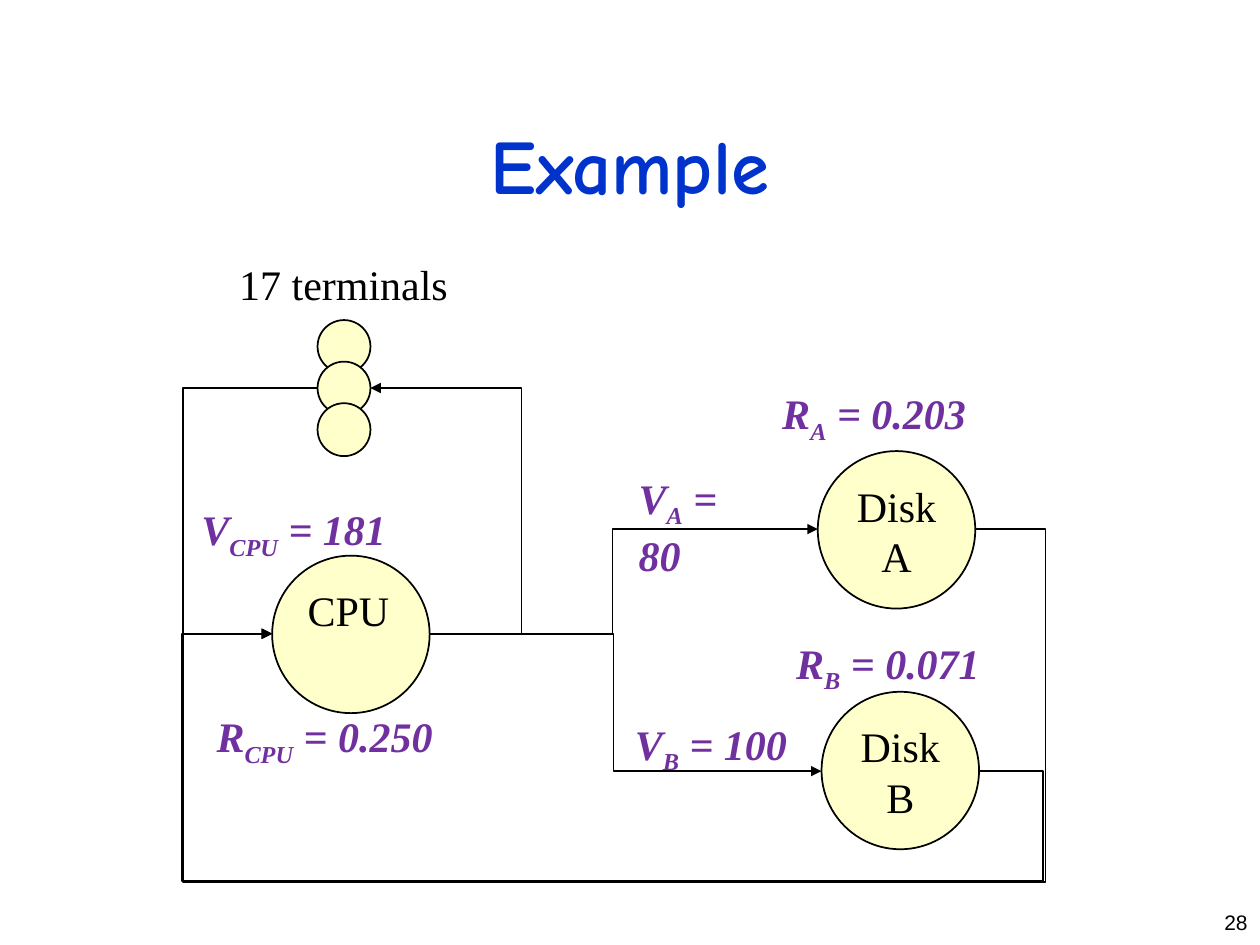
import pptx
import pptx.util
import pptx.dml.color
import pptx.enum.shapes
import pptx.enum.text
import pptx.oxml.ns
import pptx.oxml.xmlchemy

Inch = pptx.util.Inches
Align = pptx.enum.text.PP_ALIGN
Anchor = pptx.enum.text.MSO_ANCHOR

# Theme: colours and type
THEME = {
    "ink": "000000",
    "fill": "FFFFCC",
    "line": 1,
    "head": {"name": "Comic Neue", "size": 44, "color": "0033CC", "bold": True},
    "body": {"name": "Times New Roman", "size": 24, "color": "000000"},
    "math": {"name": "Times New Roman", "size": 24, "color": "7030A0",
             "bold": True, "italic": True},
    "page": {"name": "Arial", "size": 12, "color": "000000"},
}

# Content: circles as (text, left, top, align)
DISC = 1.25
NODES = [
    ("CPU", 2.16, 4.41, Align.LEFT),
    ("Disk A", 6.49, 3.58, Align.CENTER),
    ("Disk B", 6.52, 5.49, Align.CENTER),
]
DOT, DOT_X, DOT_Y, DOT_STEP, DOTS = 0.42, 2.52, 2.54, 0.33, 3

# Routes as (from, to, bends); bends run x or x, y, x
OUT, IN = (3.41, 5.03), (2.16, 5.03)
ROUTES = [
    (OUT, (6.49, 4.2), [4.86]),
    (OUT, (6.52, 6.12), [4.87]),
    (OUT, (2.94, 3.08), [4.14]),
    ((2.52, 3.08), IN, [1.45]),
    ((7.74, 4.2), IN, [8.3, 7, 1.45]),
    ((7.77, 6.12), IN, [8.28, 6.99, 1.45]),
]

# Labels as (letter, index, value, left, top, width, wrap)
LABELS = [
    ("R", "CPU", "0.250", 1.62, 5.59, 1.99, False),
    ("R", "A", "0.203", 6.11, 3.03, 1.69, False),
    ("R", "B", "0.071", 6.22, 5.01, 1.69, False),
    ("V", "A", "80", 4.97, 3.7, 1.23, True),
    ("V", "B", "100", 4.94, 5.65, 1.44, False),
    ("V", "CPU", "181", 1.5, 3.95, 1.74, False),
]


def tint(code):
    return pptx.dml.color.RGBColor.from_string(code)


def node(tag, **attrs):
    item = pptx.oxml.xmlchemy.OxmlElement(tag)
    for key, val in attrs.items():
        item.set(key, val)
    return item


def style(font, look):
    for key, val in look.items():
        if key == "color":
            font.color.rgb = tint(val)
        else:
            setattr(font, key, pptx.util.Pt(val) if key == "size" else val)


def write(frame, runs, look, align=Align.LEFT, **form):
    """Fill a frame with (text, is_sub) runs."""
    form = {"word_wrap": True, "vertical_anchor": Anchor.TOP, **form}
    for key, val in form.items():
        setattr(frame, key, val)
    para = frame.paragraphs[0]
    para.alignment = align
    for text, sub in runs:
        run = para.add_run()
        run.text = text
        style(run.font, THEME[look])
        if sub:
            run.font._element.set("baseline", "-25000")


def label(slide, box, runs, look, **form):
    shape = slide.shapes.add_textbox(*map(Inch, box))
    write(shape.text_frame, runs, look, **form)


def trim(line):
    line.color.rgb = tint(THEME["ink"])
    line.width = pptx.util.Pt(THEME["line"])


def disc(slide, left, top, size):
    kind = pptx.enum.shapes.MSO_SHAPE.OVAL
    shape = slide.shapes.add_shape(kind, *map(Inch, (left, top, size, size)))
    shape.shadow.inherit = False
    shape.fill.solid()
    shape.fill.fore_color.rgb = tint(THEME["fill"])
    trim(shape.line)
    return shape


def route(slide, start, end, bends):
    kind = pptx.enum.shapes.MSO_CONNECTOR.ELBOW
    wire = slide.shapes.add_connector(kind, *map(Inch, start + end))
    trim(wire.line)
    props = wire._element.spPr
    # Each bend is a share of the span along its own axis
    geom = props.find(pptx.oxml.ns.qn("a:prstGeom"))
    geom.set("prst", f"bentConnector{len(bends) + 2}")
    guides = geom.find(pptx.oxml.ns.qn("a:avLst"))
    for num, bend in enumerate(bends):
        axis = num % 2
        share = (bend - start[axis]) / (end[axis] - start[axis])
        guides.append(node("a:gd", name=f"adj{num + 1}",
                           fmla=f"val {round(share * 100000)}"))
    # Arrowhead, no shadow
    line = props.find(pptx.oxml.ns.qn("a:ln"))
    line.append(node("a:tailEnd", type="triangle"))
    props.append(node("a:effectLst"))


def main():
    deck = pptx.Presentation()
    deck.slide_width, deck.slide_height = Inch(10), Inch(7.5)
    slide = deck.slides.add_slide(deck.slide_layouts[6])

    # Title and page number
    label(slide, (0.75, 0.67, 8.5, 1.25), [("Example", False)], "head",
          align=Align.CENTER, vertical_anchor=Anchor.MIDDLE)
    label(slide, (9.25, 7.17, 0.75, 0.33), [("28", False)], "page",
          align=Align.RIGHT)

    # CPU and disks
    for text, left, top, align in NODES:
        shape = disc(slide, left, top, DISC)
        write(shape.text_frame, [(text, False)], "body", align)

    # Terminals
    for num in range(DOTS):
        disc(slide, DOT_X, DOT_Y + num * DOT_STEP, DOT)
    label(slide, (1.8, 2, 1.87, 0.5), [("17 terminals", False)], "body",
          word_wrap=False)

    # Flow lines
    for start, end, bends in ROUTES:
        route(slide, start, end, bends)

    # Visit counts and residence times
    for name, index, value, left, top, width, wrap in LABELS:
        runs = [(name, False), (index, True), (f" = {value}", False)]
        label(slide, (left, top, width, 0.5), runs, "math", word_wrap=wrap)

    deck.save("out.pptx")


if __name__ == "__main__":
    main()
